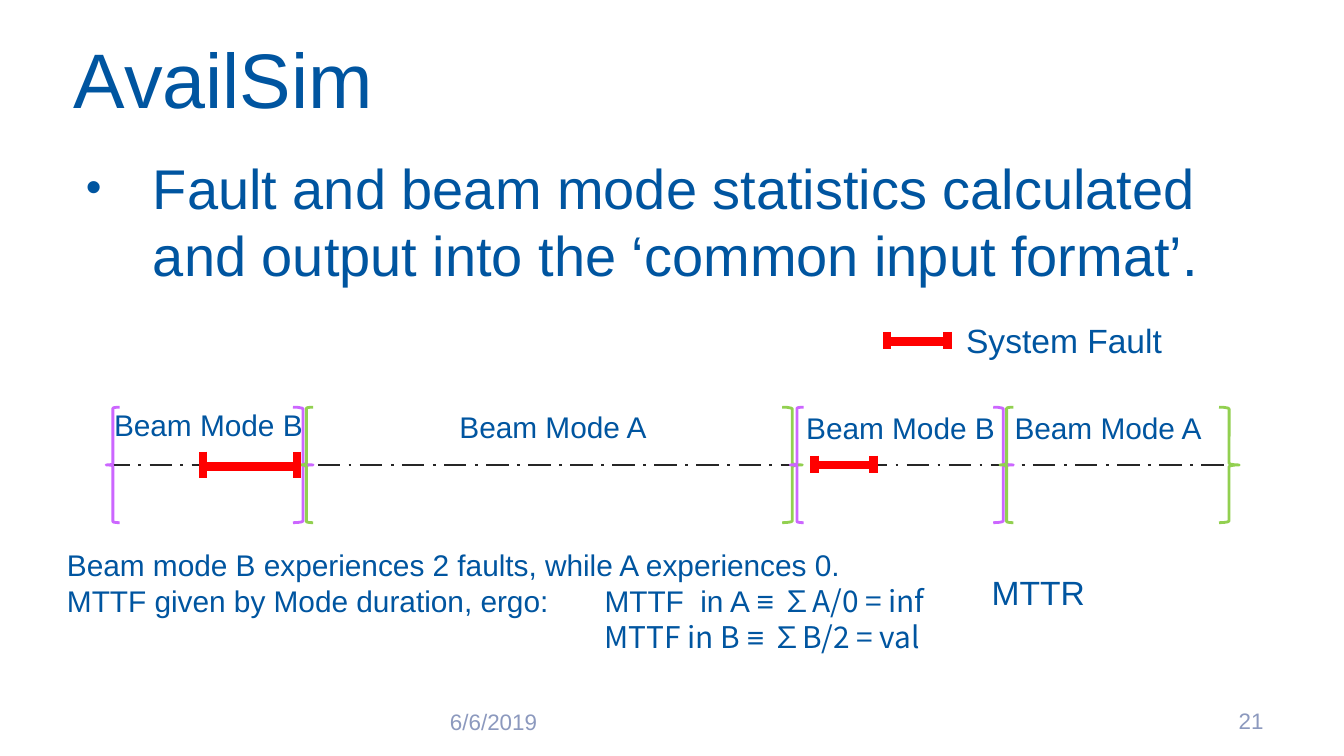
from lxml import etree
from pptx import Presentation
from pptx.dml.color import RGBColor
from pptx.enum.dml import MSO_LINE
from pptx.enum.shapes import MSO_CONNECTOR, MSO_SHAPE
from pptx.enum.text import MSO_ANCHOR, MSO_AUTO_SIZE, PP_ALIGN
from pptx.oxml.ns import qn
from pptx.util import Inches, Pt

STRAIGHT = MSO_CONNECTOR.STRAIGHT
LEFT_BRACE = MSO_SHAPE.LEFT_BRACE
RIGHT_BRACE = MSO_SHAPE.RIGHT_BRACE
LONG_DASH_DOT = MSO_LINE.LONG_DASH_DOT
NO_AUTOFIT = MSO_AUTO_SIZE.NONE
MIDDLE = MSO_ANCHOR.MIDDLE
TOP = MSO_ANCHOR.TOP
LEFT = PP_ALIGN.LEFT
RIGHT = PP_ALIGN.RIGHT

COLORS = {
    "text": "0055A0",
    "footer": "8C99BE",
    "axis": "262626",
    "mode_a": "92D050",
    "mode_b": "CC66FF",
    "fault": "FF0000",
}
FONT = "Arial"
MATH_FONT = "Noto Sans CJK KR"


def add_text(text, left, top, width, height, size, color="text", anchor=TOP, align=LEFT):
    shape = slide.shapes.add_textbox(Inches(left), Inches(top), Inches(width), Inches(height))
    frame = shape.text_frame
    frame.word_wrap = True
    frame.vertical_anchor = anchor
    frame.text = text
    paragraph = frame.paragraphs[0]
    paragraph.alignment = align
    for run in paragraph.runs:
        run.font.size = Pt(size)
        run.font.name = FONT
        run.font.color.rgb = RGBColor.from_string(COLORS[color])
    return shape


def add_line(shapes, x1, y1, x2, y2, color, width):
    line = shapes.add_connector(STRAIGHT, Inches(x1), Inches(y1), Inches(x2), Inches(y2))
    line.line.color.rgb = RGBColor.from_string(COLORS[color])
    line.line.width = Pt(width)
    etree.SubElement(line._element.spPr, qn("a:effectLst"))
    return line


presentation = Presentation()
presentation.slide_width = Inches(10)
presentation.slide_height = Inches(10 * 9 / 16)
slide = presentation.slides.add_slide(presentation.slide_layouts[5])

title = slide.shapes.title
title.left, title.top, title.width, title.height = Inches(0.5), Inches(0.19), Inches(9), Inches(0.77)
frame = title.text_frame
frame.text = "AvailSim"
frame.auto_size = NO_AUTOFIT
frame.vertical_anchor = MIDDLE
frame.margin_left = frame.margin_right = frame.margin_top = frame.margin_bottom = Inches(0.05)
paragraph = frame.paragraphs[0]
paragraph.alignment = LEFT
font = paragraph.runs[0].font
font.size = Pt(41.4)
font.name = FONT
font.color.rgb = RGBColor.from_string(COLORS["text"])

body = add_text(
    "Fault and beam mode statistics calculated and output into the ‘common input format’.",
    0.5, 1.09, 9, 3.5, 30)
properties = body.text_frame.paragraphs[0]._p.get_or_add_pPr()
properties.set("marL", str(Inches(0.54)))
properties.set("indent", str(Inches(-0.5)))
bullet_color = etree.SubElement(properties, qn("a:buClr"))
etree.SubElement(bullet_color, qn("a:srgbClr"), val=COLORS["text"])
etree.SubElement(properties, qn("a:buSzPct"), val="80000")
etree.SubElement(properties, qn("a:buFont"), typeface=FONT)
etree.SubElement(properties, qn("a:buChar"), char="•")

add_text("6/6/2019", 3.25, 5.22, 2.33, 0.3, 12, "footer", MIDDLE)
add_text("21", 8.95, 5.21, 0.55, 0.3, 12, "footer", MIDDLE, RIGHT)

axis = add_line(slide.shapes, 0.8, 3.46, 9.22, 3.46, "axis", 1.5)
axis.line.dash_style = LONG_DASH_DOT

modes = [
    ("mode_b", 0.79, 2.18),
    ("mode_a", 2.23, 5.82),
    ("mode_b", 5.88, 7.39),
    ("mode_a", 7.44, 9.07),
]
for color, start, end in modes:
    for kind, left, width in [(LEFT_BRACE, start, 0.1), (RIGHT_BRACE, end, 0.15)]:
        brace = slide.shapes.add_shape(kind, Inches(left), Inches(3.03), Inches(width), Inches(0.86))
        brace.shadow.inherit = False
        brace.fill.background()
        brace.line.color.rgb = RGBColor.from_string(COLORS[color])
        brace.line.width = Pt(1.5)

faults = [
    (6.06, 6.5, 3.46, 3.39, 3.52),
    (1.51, 2.21, 3.47, 3.36, 3.56),
    (6.6, 7.05, 2.54, 2.47, 2.6),
]
for start, end, middle, top, bottom in faults:
    fault = slide.shapes.add_group_shape()
    add_line(fault.shapes, start, middle, end, middle, "fault", 4.5)
    for x in (end, start):
        add_line(fault.shapes, x, top, x, bottom, "fault", 4.5)

labels = [
    ("System Fault", 7.09, 2.33, 1.67, 0.4, 18),
    ("Beam Mode B", 0.75, 2.98, 1.82, 0.37, 16),
    ("Beam Mode A", 3.32, 2.99, 1.82, 0.37, 16),
    ("Beam Mode B", 5.9, 3, 1.82, 0.37, 16),
    ("Beam Mode A", 7.45, 3, 1.82, 0.37, 16),
    ("MTTR", 7.28, 4.21, 1.99, 0.4, 18),
]
for label in labels:
    add_text(*label)

summary = add_text("Beam mode B experiences 2 faults, while A experiences 0.", 0.4, 4.02, 9.09, 1.18, 16)
formulas = [
    [("MTTF given by Mode duration, ergo: \tMTTF  in A ≡ ", FONT), ("∑A/0 = inf", MATH_FONT)],
    [("\tMTTF in B ", MATH_FONT), ("≡ ", FONT), ("∑B/2 = val", MATH_FONT)],
]
for parts in formulas:
    paragraph = summary.text_frame.add_paragraph()
    tabs = etree.SubElement(paragraph._p.get_or_add_pPr(), qn("a:tabLst"))
    etree.SubElement(tabs, qn("a:tab"), pos=str(Inches(4)), algn="l")
    for text, font_name in parts:
        run = paragraph.add_run()
        run.text = text
        run.font.size = Pt(16)
        run.font.name = font_name
        run.font.color.rgb = RGBColor.from_string(COLORS["text"])

presentation.save("out.pptx")
